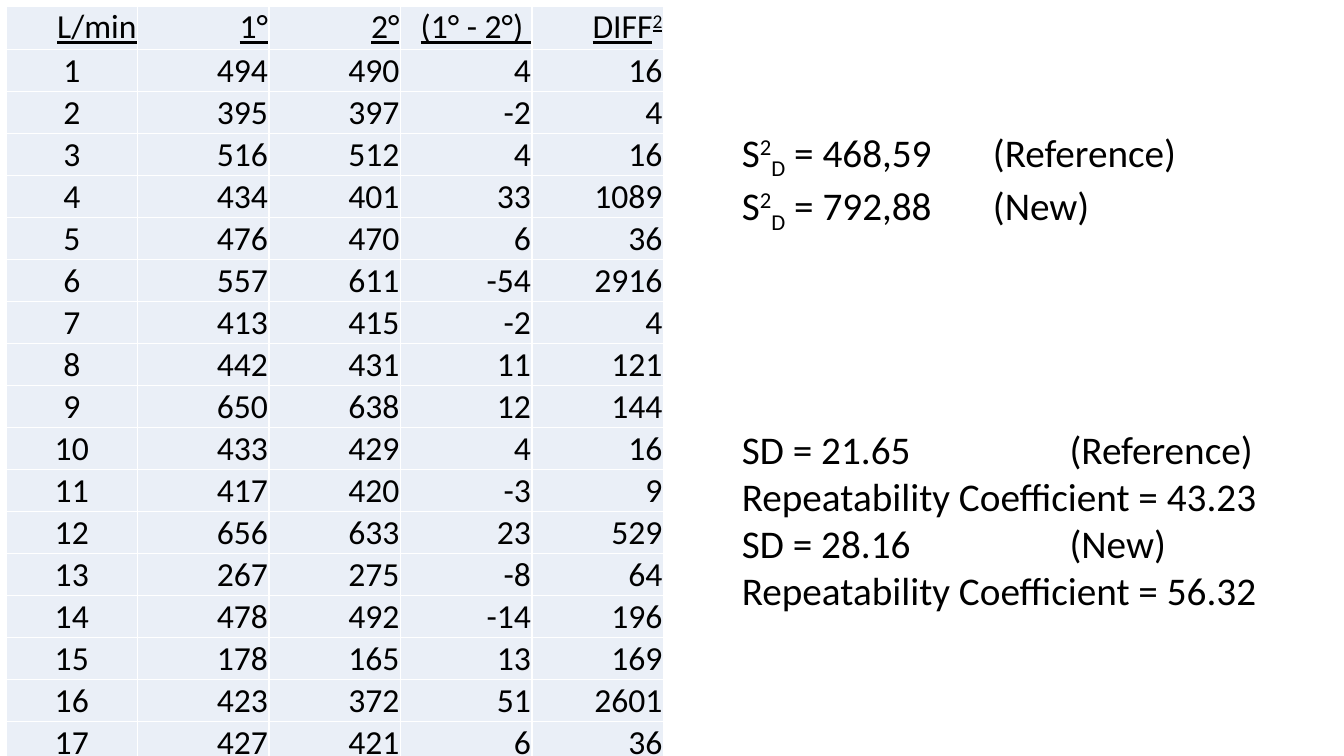
from dataclasses import dataclass

from lxml import etree
from pptx import Presentation
from pptx.dml.color import RGBColor
from pptx.enum.text import MSO_ANCHOR, MSO_AUTO_SIZE, PP_ALIGN
from pptx.oxml.ns import qn
from pptx.util import Inches, Pt

TOP, BOTTOM = MSO_ANCHOR.TOP, MSO_ANCHOR.BOTTOM
CENTER, RIGHT = PP_ALIGN.CENTER, PP_ALIGN.RIGHT
GROW = MSO_AUTO_SIZE.SHAPE_TO_FIT_TEXT


@dataclass(frozen=True)
class Theme:
    """Colours, font and type sizes of the slide."""
    ink: str = "000000"
    cell: str = "EAEFF7"
    rule: str = "FFFFFF"
    font: str = "Calibri"
    small: int = 24
    large: int = 28
    sup: int = 30
    sub: int = -25


THEME = Theme()
HEADS = [[("L/min", 0)], [("1°", 0)], [("2°", 0)], [("(1° - 2°) ", 0)],
         [("DIFF", 0), ("2", THEME.sup)]]
FIRST = [494, 395, 516, 434, 476, 557, 413, 442, 650,
         433, 417, 656, 267, 478, 178, 423, 427]
SECOND = [490, 397, 512, 401, 470, 611, 415, 431, 638,
          429, 420, 633, 275, 492, 165, 372, 421]
VAR = [("S", 0), ("2", THEME.sup), ("D", THEME.sub)]
SPREAD = [VAR + [(" = 468,59\t(Reference)", 0)],
          VAR + [(" = 792,88\t(New)", 0)]]
REPEAT = [[("SD = 21.65\t(Reference)", 0)],
          [("Repeatability Coefficient = 43.23", 0)],
          [("SD = 28.16\t(New)", 0)],
          [("Repeatability Coefficient = 56.32", 0)]]


def add_runs(para, parts, size, under=False):
    """Add (text, baseline shift) parts to a paragraph."""
    for text, shift in parts:
        run = para.add_run()
        run.text = text
        font = run.font
        font.name, font.size = THEME.font, Pt(size)
        font.color.rgb = RGBColor.from_string(THEME.ink)
        if under:
            font.underline = True
        if shift:
            font._element.set("baseline", str(shift * 1000))


def add_edges(cell):
    """Rule all four sides of a cell."""
    props = cell._tc.get_or_add_tcPr()
    for i, side in enumerate("LRTB"):
        line = etree.Element(qn(f"a:ln{side}"), w=str(Pt(1)))
        fill = etree.SubElement(line, qn("a:solidFill"))
        etree.SubElement(fill, qn("a:srgbClr"), val=THEME.rule)
        props.insert(i, line)


def fill_cell(cell, parts, head, align):
    """Style one table cell and write its text."""
    cell.margin_left = cell.margin_right = cell.margin_top = Inches(0.01)
    cell.margin_bottom = 0
    cell.vertical_anchor = TOP if head else BOTTOM
    cell.fill.solid()
    cell.fill.fore_color.rgb = RGBColor.from_string(THEME.cell)
    add_edges(cell)
    para = cell.text_frame.paragraphs[0]
    para.alignment = align
    add_runs(para, parts, THEME.small, head)


def add_data(slide, box, top_row):
    """Place the table of paired readings in the box."""
    pairs = enumerate(zip(FIRST, SECOND), 1)
    body = [[[(str(v), 0)] for v in (n, a, b, a - b, (a - b) ** 2)]
            for n, (a, b) in pairs]
    rows = [HEADS] + body
    frame = slide.shapes.add_table(len(rows), len(HEADS), *map(Inches, box))
    table = frame.table
    table.first_row = table.horz_banding = False
    for col in table.columns:
        col.width = Inches(box[2] / len(HEADS))
    for r, row in enumerate(rows):
        high = (box[3] - top_row) / len(body) if r else top_row
        table.rows[r].height = Inches(high)
        for c, parts in enumerate(row):
            align = CENTER if r and c == 0 else RIGHT
            fill_cell(table.cell(r, c), parts, r == 0, align)


def add_notes(slide, box, lines, tab):
    """Place lines of results in the box, with labels at a tab stop."""
    frame = slide.shapes.add_textbox(*map(Inches, box)).text_frame
    frame.word_wrap = True
    frame.auto_size = GROW
    for i, parts in enumerate(lines):
        para = frame.add_paragraph() if i else frame.paragraphs[0]
        stops = etree.SubElement(para._p.get_or_add_pPr(), qn("a:tabLst"))
        etree.SubElement(stops, qn("a:tab"), pos=str(Inches(tab)), algn="l")
        add_runs(para, parts, THEME.large)


def main():
    """Build and save the slide."""
    deck = Presentation()
    deck.slide_width, deck.slide_height = Inches(13.33), Inches(7.5)
    slide = deck.slides.add_slide(deck.slide_layouts[6])
    add_data(slide, (0.06, 0.06, 6.52, 7.41), 0.43)
    add_notes(slide, (7.26, 1.22, 5.32, 1.04), SPREAD, 2.49)
    add_notes(slide, (7.26, 4.17, 5.61, 1.99), REPEAT, 3.25)
    deck.save("out.pptx")


if __name__ == "__main__":
    main()
